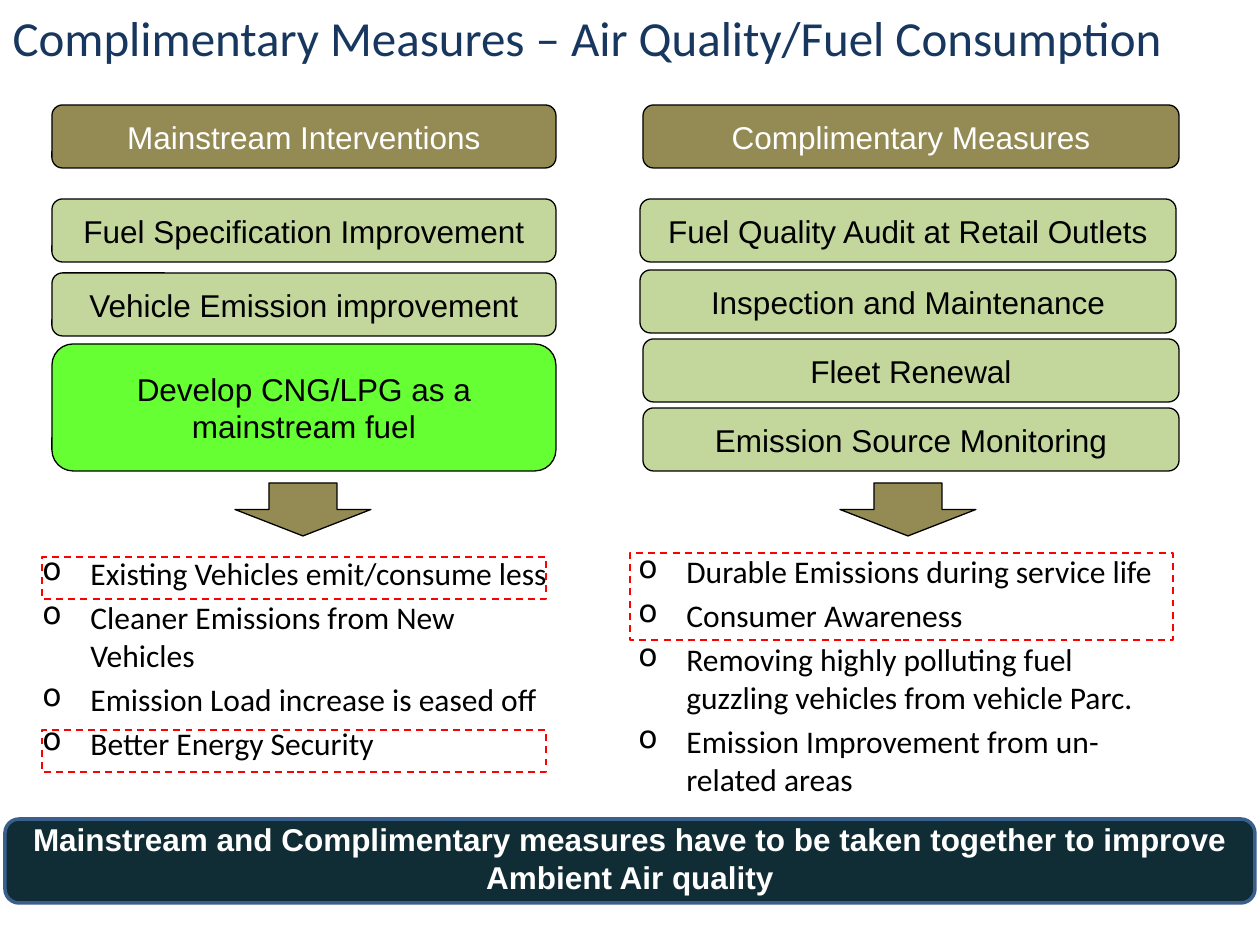
from lxml.etree import SubElement
from pptx import Presentation
from pptx.dml.color import RGBColor
from pptx.enum.dml import MSO_LINE
from pptx.enum.shapes import MSO_SHAPE
from pptx.enum.text import MSO_ANCHOR, MSO_AUTO_SIZE, PP_ALIGN
from pptx.oxml.ns import qn
from pptx.util import Emu, Pt

PX_PER_INCH = 126
BLACK = RGBColor(0x00, 0x00, 0x00)
WHITE = RGBColor(0xFF, 0xFF, 0xFF)
NAVY = RGBColor(0x17, 0x37, 0x5E)
OLIVE = RGBColor(0x94, 0x8A, 0x54)
SAGE = RGBColor(0xC3, 0xD6, 0x9B)
LIME = RGBColor(0x66, 0xFF, 0x33)
DARK_TEAL = RGBColor(0x10, 0x2C, 0x34)
STEEL = RGBColor(0x3A, 0x5F, 0x8C)
RED = RGBColor(0xFF, 0x00, 0x00)

LEFT_X, LEFT_W = 52, 504
RIGHT_X, RIGHT_W = 643, 536
BOX_H = 63

BOXES = [
    ("Mainstream Interventions", LEFT_X, 105, LEFT_W, BOX_H, OLIVE, WHITE),
    ("Fuel Specification Improvement", LEFT_X, 199, LEFT_W, BOX_H, SAGE, BLACK),
    ("Vehicle Emission improvement", LEFT_X, 273, LEFT_W, BOX_H, SAGE, BLACK),
    ("Develop CNG/LPG as a mainstream fuel", LEFT_X, 344, LEFT_W, 127, LIME, BLACK),
    ("Complimentary Measures", RIGHT_X, 105, RIGHT_W, BOX_H, OLIVE, WHITE),
    ("Fuel Quality Audit at Retail Outlets", 640, 199, RIGHT_W, BOX_H, SAGE, BLACK),
    ("Inspection and Maintenance", 640, 270, RIGHT_W, BOX_H, SAGE, BLACK),
    ("Fleet Renewal", RIGHT_X, 339, RIGHT_W, BOX_H, SAGE, BLACK),
    ("Emission Source Monitoring", RIGHT_X, 408, RIGHT_W, BOX_H, SAGE, BLACK),
]
MAINSTREAM_OUTCOMES = [
    "Existing Vehicles emit/consume less",
    "Cleaner Emissions from New Vehicles",
    "Emission Load increase is eased off",
    "Better Energy Security",
]
COMPLIMENTARY_OUTCOMES = [
    "Durable Emissions during service life",
    "Consumer Awareness",
    "Removing highly polluting fuel guzzling vehicles from vehicle Parc.",
    "Emission Improvement from un-related areas",
]
HIGHLIGHTS = [(42, 557, 504, 42), (630, 553, 543, 87), (42, 730, 504, 42)]


def px(length):
    return Emu(round(length * 914400 / PX_PER_INCH))


def style_font(font, name, size, color, bold=False):
    font.name = name
    font.size = Pt(size)
    font.color.rgb = color
    font.bold = bold


def add_title(slide, text):
    title = slide.shapes.title
    title.left, title.top, title.width, title.height = px(0), px(0), px(1260), px(73)
    frame = title.text_frame
    frame.text = text
    frame.auto_size = MSO_AUTO_SIZE.NONE
    frame.vertical_anchor = MSO_ANCHOR.MIDDLE
    heading = frame.paragraphs[0]
    heading.alignment = PP_ALIGN.LEFT
    style_font(heading.runs[0].font, "Calibri", 28, NAVY)


def add_block(slide, preset, left, top, width, height, fill, line=BLACK, weight=0.75):
    block = slide.shapes.add_shape(preset, px(left), px(top), px(width), px(height))
    block.shadow.inherit = False
    if fill is None:
        block.fill.background()
    else:
        block.fill.solid()
        block.fill.fore_color.rgb = fill
    block.line.color.rgb = line
    block.line.width = Pt(weight)
    return block


def add_label(block, text, color, bold=False):
    frame = block.text_frame
    frame.text = text
    frame.word_wrap = True
    frame.vertical_anchor = MSO_ANCHOR.MIDDLE
    label = frame.paragraphs[0]
    label.alignment = PP_ALIGN.CENTER
    style_font(label.runs[0].font, "Arial", 18, color, bold)


def add_bullets(slide, items, left, top, width, height):
    box = slide.shapes.add_textbox(px(left), px(top), px(width), px(height))
    frame = box.text_frame
    frame.word_wrap = True
    frame.text = "\n".join(items)
    for index, outcome in enumerate(frame.paragraphs):
        outcome.space_before = Pt(3.6 if index else 0)
        properties = outcome._p.get_or_add_pPr()
        properties.set("marL", str(px(48)))
        properties.set("indent", str(-px(48)))
        SubElement(properties, qn("a:buChar")).set("char", "o")
        style_font(outcome.runs[0].font, "Calibri", 18, BLACK)


def add_highlight(slide, left, top, width, height):
    frame = add_block(slide, MSO_SHAPE.RECTANGLE, left, top, width, height, None, RED, 1)
    frame.line.dash_style = MSO_LINE.DASH


def add_conclusion(slide, text):
    banner = add_block(slide, MSO_SHAPE.ROUNDED_RECTANGLE, 5, 819, 1250, 84,
                       DARK_TEAL, STEEL, 2)
    add_label(banner, text, WHITE, bold=True)
    banner.text_frame.margin_top = 0


def main():
    presentation = Presentation()
    presentation.slide_width, presentation.slide_height = px(1260), px(945)
    slide = presentation.slides.add_slide(presentation.slide_layouts[5])

    add_title(slide, "Complimentary Measures – Air Quality/Fuel Consumption")
    for text, left, top, width, height, fill, color in BOXES:
        box = add_block(slide, MSO_SHAPE.ROUNDED_RECTANGLE, left, top, width, height, fill)
        add_label(box, text, color)
    for arrow_left in (235, 840):
        add_block(slide, MSO_SHAPE.DOWN_ARROW, arrow_left, 483, 136, 53, OLIVE)
    add_bullets(slide, MAINSTREAM_OUTCOMES, 30, 548, 546, 229)
    add_bullets(slide, COMPLIMENTARY_OUTCOMES, 626, 546, 546, 273)
    add_conclusion(slide, "Mainstream and Complimentary measures have to be taken "
                          "together to improve Ambient Air quality")
    for bounds in HIGHLIGHTS:
        add_highlight(slide, *bounds)

    presentation.save("out.pptx")


if __name__ == "__main__":
    main()
